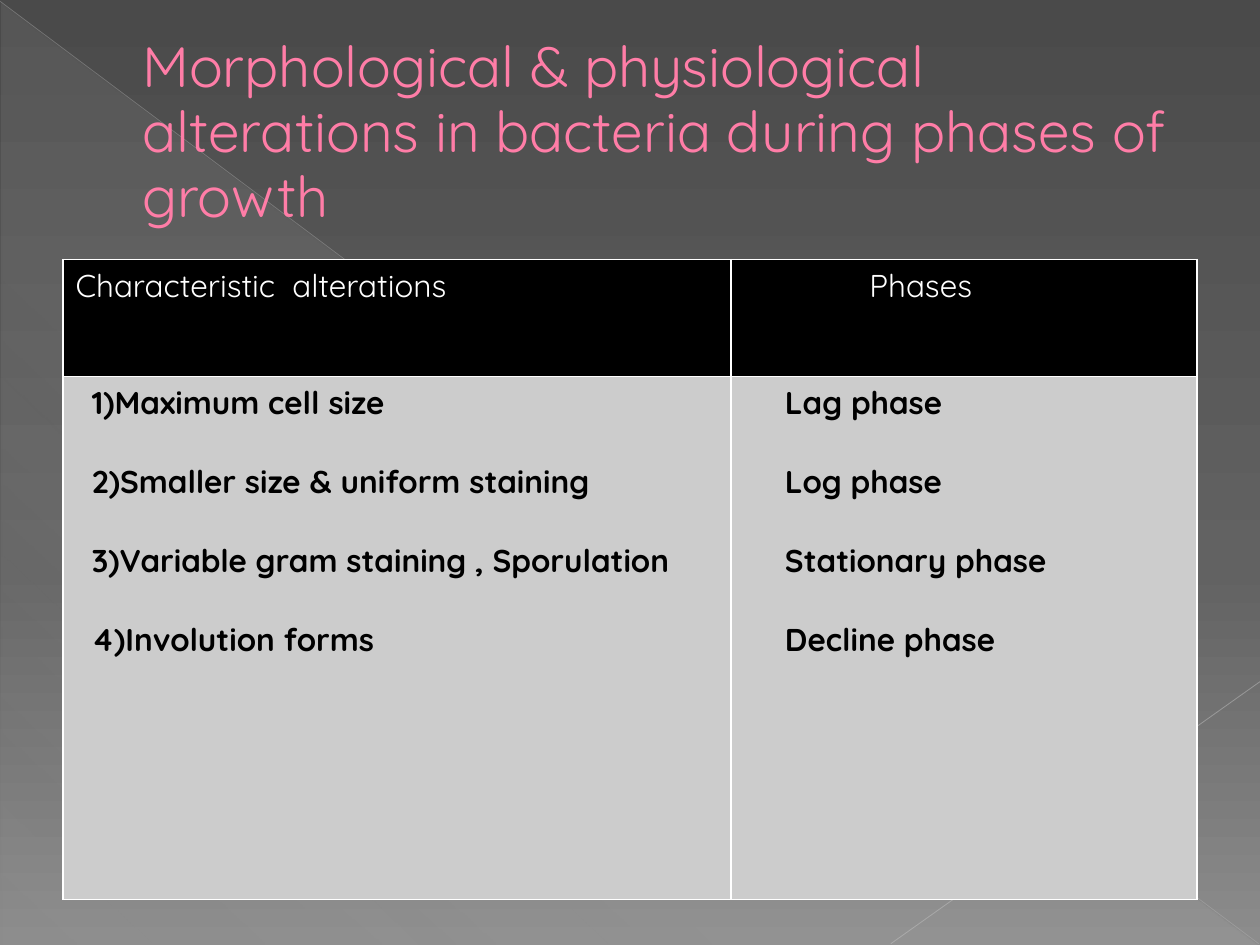
from lxml.etree import SubElement
from pptx import Presentation
from pptx.dml.color import RGBColor
from pptx.enum.shapes import MSO_CONNECTOR, MSO_SHAPE
from pptx.enum.text import MSO_ANCHOR
from pptx.oxml import parse_xml
from pptx.oxml.ns import nsdecls, qn
from pptx.util import Inches, Pt


def rgb(c):
    return RGBColor.from_string(c)


def gradient(fill, parent, stops, angle):
    fill.solid()
    fill.fore_color.rgb = rgb(stops[0][1])
    gs = "".join(
        f'<a:gs pos="{pos * 1000}"><a:srgbClr val="{c}"><a:alpha val="{alpha * 1000}"/></a:srgbClr></a:gs>'
        for pos, c, alpha in stops)
    solid = parent.find(qn("a:solidFill"))
    parent.replace(solid, parse_xml(
        f'<a:gradFill {nsdecls("a")} rotWithShape="1"><a:gsLst>{gs}</a:gsLst>'
        f'<a:lin ang="{angle * 60000}" scaled="0"/></a:gradFill>'))


prs = Presentation()
prs.slide_width, prs.slide_height = Inches(10), Inches(7.5)
s = prs.slides.add_slide(prs.slide_layouts[6])

fill = s.background.fill
fill.solid()
bg = s.element.find(".//" + qn("p:bgPr"))
gradient(fill, bg, [(0, "4A4A4A", 100), (60, "626262", 100), (100, "8C8C8C", 100)], 90)

sp = s.shapes.add_shape(MSO_SHAPE.RIGHT_TRIANGLE, Inches(0.01), Inches(0.02), Inches(9.98), Inches(7.48))
sp.shadow.inherit = False
sp.line.fill.background()
gradient(sp.fill, sp.element.spPr, [(0, "D2D2D2", 10), (70, "D2D2D2", 8), (100, "D2D2D2", 1)], 133)

for x1, y1, x2, y2, c, width, alpha in [
    (0, 0.01, 9.99, 7.49, "BFBFBF", 0.39, 35),
    (10, 5.41, 7.07, 7.49, "C6C6C6", 0.47, 45),
]:
    line = s.shapes.add_connector(MSO_CONNECTOR.STRAIGHT, Inches(x1), Inches(y1), Inches(x2), Inches(y2))
    line.line.color.rgb = rgb(c)
    line.line.width = Pt(width)
    spPr = line.element.spPr
    SubElement(spPr.find(".//" + qn("a:srgbClr")), qn("a:alpha"), val=str(alpha * 1000))
    SubElement(spPr, qn("a:effectLst"))

title = s.shapes.add_textbox(Inches(0.5), Inches(0.29), Inches(9), Inches(1.53))
tf = title.text_frame
tf.word_wrap = True
tf.vertical_anchor = MSO_ANCHOR.MIDDLE
tf.margin_left = Inches(0.63)
p = tf.paragraphs[0]
p.text = "Morphological & physiological alterations in bacteria during phases of growth"
p.line_spacing = 0.96
p.font.name, p.font.size, p.font.color.rgb = "Quicksand", Pt(32.4), rgb("FF7DA7")

columns = [
    (5.3, 0.1, "Characteristic  alterations", 0.23,
     ["1)Maximum cell size", "2)Smaller size & uniform staining",
      "3)Variable gram staining , Sporulation", "4)Involution forms"]),
    (3.7, 1.1, "Phases", 0.43,
     ["Lag phase", "Log phase", "Stationary phase", "Decline phase"]),
]
table = s.shapes.add_table(2, 2, Inches(0.5), Inches(2.06), Inches(9), Inches(5.08)).table
for row, height in zip(table.rows, (0.93, 4.15)):
    row.height = Inches(height)

for i, (width, head_indent, head, body_indent, body) in enumerate(columns):
    table.columns[i].width = Inches(width)
    for j, (indent, lines, back, ink) in enumerate([
        (head_indent, [head], "000000", "FFFFFF"),
        (body_indent, body, "CCCCCC", "000000"),
    ]):
        cell = table.cell(j, i)
        cell.margin_left = Inches(indent)
        tf = cell.text_frame
        tf.text = "\n".join(lines)
        for p in tf.paragraphs:
            p.space_after = Pt(22.5 * j)
            p.font.name, p.font.size, p.font.bold = "Quicksand", Pt(18), j == 1
            p.font.color.rgb = rgb(ink)
        tcPr = cell._tc.get_or_add_tcPr()
        for side in ("lnL", "lnR", "lnT", "lnB"):
            ln = SubElement(tcPr, qn("a:" + side), w=str(Pt(1)))
            SubElement(SubElement(ln, qn("a:solidFill")), qn("a:srgbClr"), val="FFFFFF")
        cell.fill.solid()
        cell.fill.fore_color.rgb = rgb(back)

prs.save("out.pptx")
